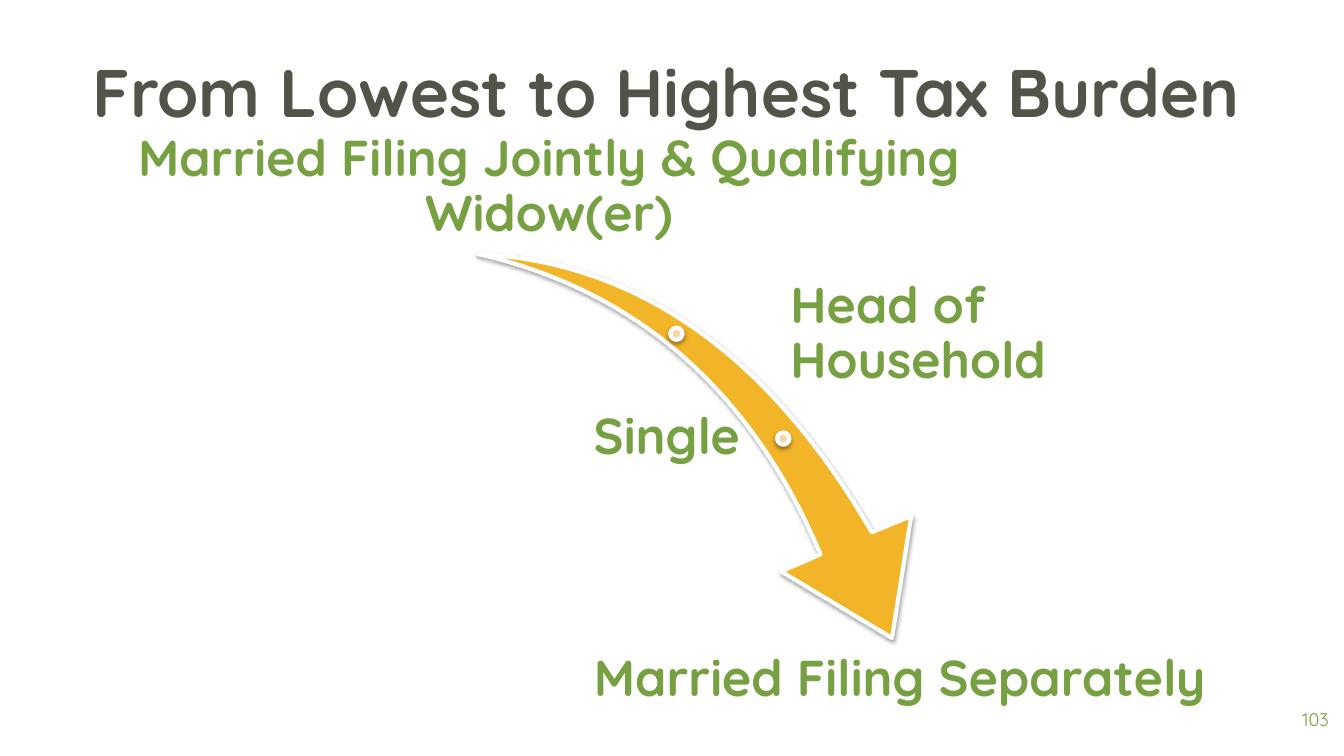
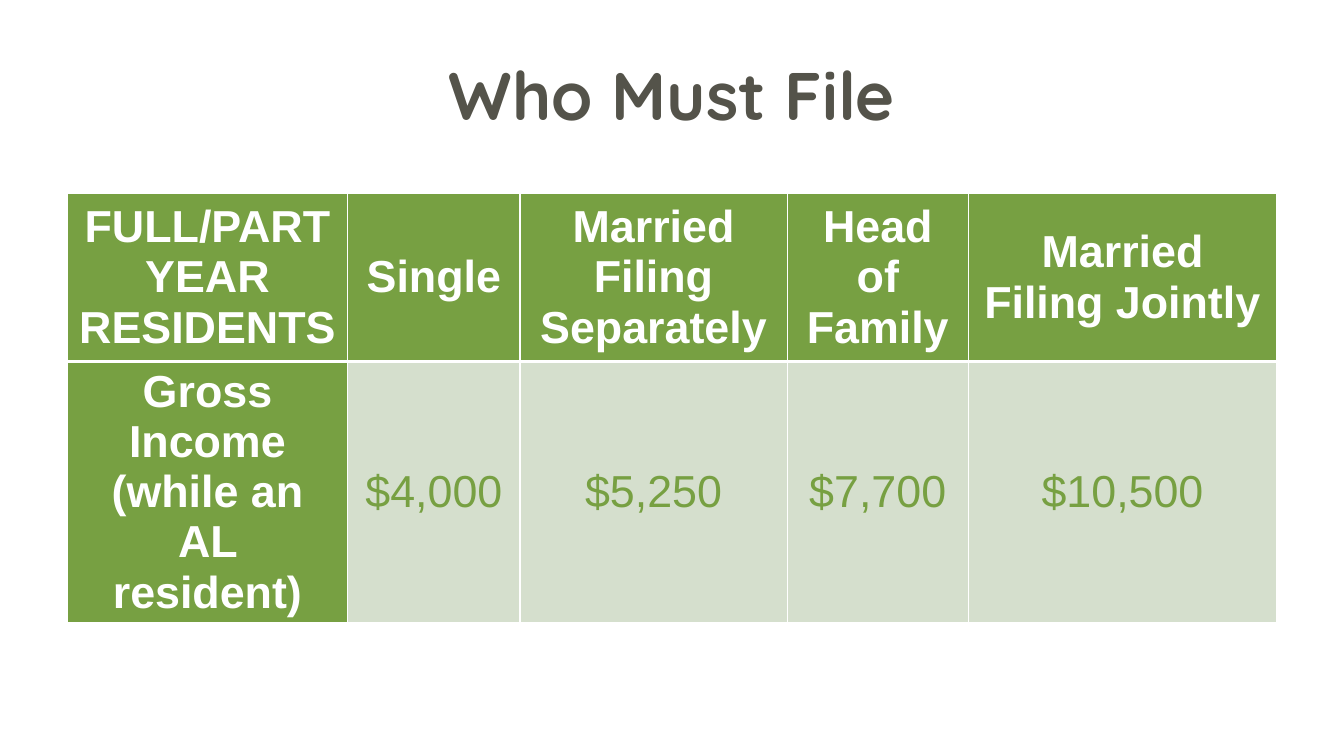
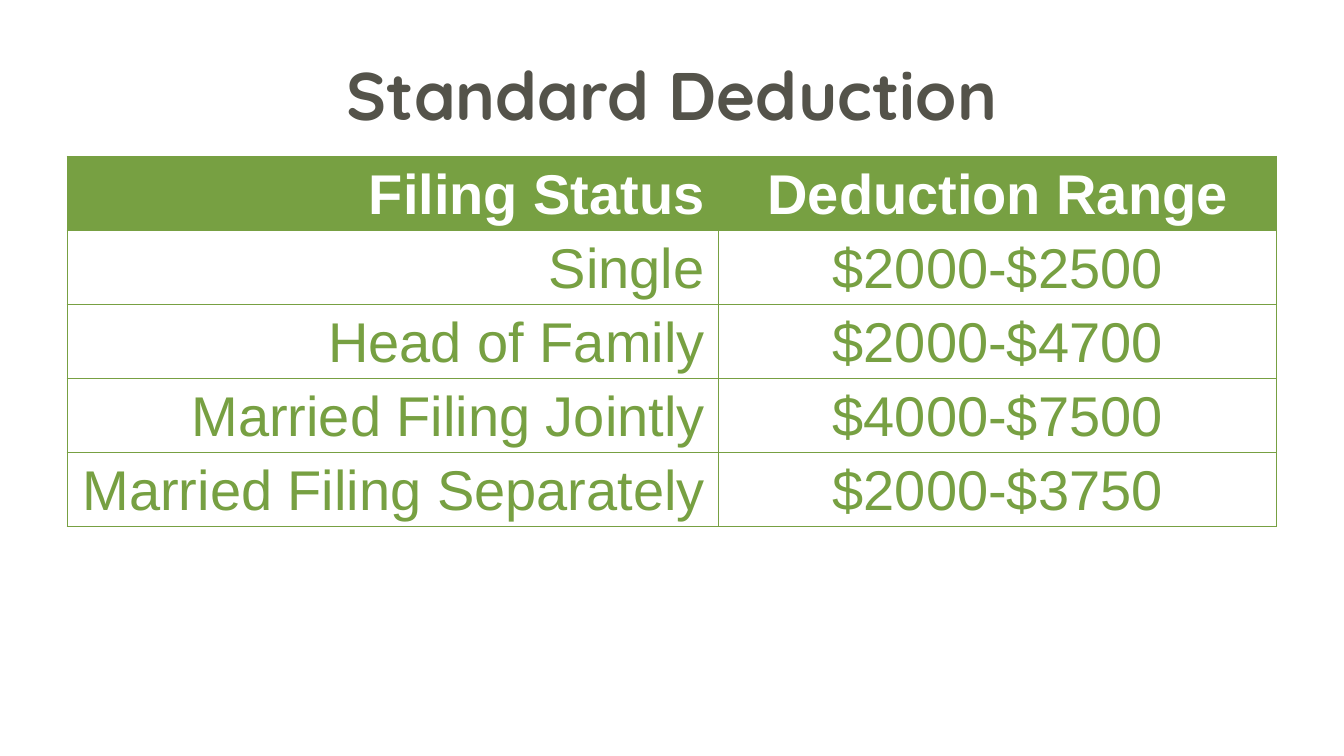
from lxml import etree
from pptx import Presentation
from pptx.dml.color import RGBColor
from pptx.enum import shapes, text
from pptx.oxml import ns
from pptx.util import Pt

GREEN, PALE_GREEN, WHITE = "77A042", "D5DFCD", "FFFFFF"
CHARCOAL, GOLD, CREAM = "54534A", "F2B529", "F4D6AB"
HEADING_FONT, TABLE_FONT = "Quicksand", "Arial"
LEFT, CENTER, RIGHT = text.PP_ALIGN.LEFT, text.PP_ALIGN.CENTER, text.PP_ALIGN.RIGHT
TOP, MIDDLE, BOTTOM = text.MSO_ANCHOR.TOP, text.MSO_ANCHOR.MIDDLE, text.MSO_ANCHOR.BOTTOM


def rgb(code):
    return RGBColor.from_string(code)


def add_child(parent, tag, **attributes):
    return etree.SubElement(parent, ns.qn(tag), attributes)


def write(frame, words, size, color, font=HEADING_FONT, bold=True, align=CENTER, spacing=None):
    paragraph = frame.paragraphs[0]
    paragraph.alignment = align
    if spacing:
        paragraph.line_spacing = spacing
    run = paragraph.add_run()
    run.text = words
    run.font.name = font
    run.font.size = Pt(size)
    run.font.bold = bold
    run.font.color.rgb = rgb(color)


def set_margins(holder, left, top, right, bottom):
    holder.margin_left, holder.margin_top = Pt(left), Pt(top)
    holder.margin_right, holder.margin_bottom = Pt(right), Pt(bottom)


def add_titled_slide(deck, words, left=48, top=21.6):
    slide = deck.slides.add_slide(deck.slide_layouts[5])
    title = slide.shapes.title
    title.left, title.top, title.width, title.height = Pt(left), Pt(top), Pt(864), Pt(90)
    frame = title.text_frame
    frame.auto_size = text.MSO_AUTO_SIZE.NONE
    frame.word_wrap = True
    frame.vertical_anchor = MIDDLE
    write(frame, words, 48, CHARCOAL)
    return slide


def add_label(slide, words, box, align=CENTER, anchor=TOP, size=36, color=GREEN,
              bold=True, margin=3.6, spacing=0.9):
    frame = slide.shapes.add_textbox(*map(Pt, box)).text_frame
    frame.word_wrap = True
    frame.vertical_anchor = anchor
    set_margins(frame, *[margin] * 4)
    write(frame, words, size, color, bold=bold, align=align, spacing=spacing)


def decorate(shape, fill):
    shape.fill.solid()
    shape.fill.fore_color.rgb = rgb(fill)
    shape.line.color.rgb = rgb(WHITE)
    shape.line.width = Pt(3)
    shape.shadow.inherit = False
    effects = shape._element.spPr.find(ns.qn("a:effectLst"))
    shadow = add_child(effects, "a:outerShdw", blurRad=str(Pt(3.1)), dist=str(Pt(1.6)),
                       dir="5400000", rotWithShape="0")
    tint = add_child(shadow, "a:srgbClr", val="000000")
    add_child(tint, "a:alpha", val="38000")


def curve(start, pull_out, pull_in, end, steps=32):
    points = []
    for step in range(1, steps + 1):
        t = step / steps
        weights = ((1 - t) ** 3, 3 * t * (1 - t) ** 2, 3 * t * t * (1 - t), t ** 3)
        anchors = (start, pull_out, pull_in, end)
        points.append(tuple(sum(w * a[axis] for w, a in zip(weights, anchors))
                            for axis in (0, 1)))
    return points


def add_burden_arrow(slide):
    tail, inner_neck = (341.3, 181.4), (586.1, 396)
    outline = curve(tail, (455.8, 187.2), (549.4, 253.4), (622.8, 380.2))
    outline += [(650.9, 368.6), (637.2, 455.8), (558, 408.2), inner_neck]
    outline += curve(inner_neck, (537.1, 279.4), (455, 207.4), tail)
    builder = slide.shapes.build_freeform(Pt(tail[0]), Pt(tail[1]))
    builder.add_line_segments([(Pt(x), Pt(y)) for x, y in outline], close=True)
    decorate(builder.convert_to_shape(), GOLD)


def add_stop(slide, left, top):
    stop = slide.shapes.add_shape(shapes.MSO_SHAPE.OVAL, Pt(left), Pt(top), Pt(8.8), Pt(8.8))
    decorate(stop, CREAM)


def set_borders(cell, color, left, right, top, bottom):
    properties = cell._tc.get_or_add_tcPr()
    edges = zip(("a:lnL", "a:lnR", "a:lnT", "a:lnB"), (left, right, top, bottom))
    for position, (tag, width) in enumerate(edges):
        edge = add_child(properties, tag, w=str(Pt(width)))
        add_child(add_child(edge, "a:solidFill"), "a:srgbClr", val=color)
        properties.insert(position, edge)


def add_grid(slide, top, widths, heights, rows, style_cell):
    frame = slide.shapes.add_table(len(rows), len(widths), Pt(48), Pt(top),
                                   Pt(sum(widths)), Pt(sum(heights)))
    table = frame.table
    table.first_row = table.horz_banding = False
    for column, width in zip(table.columns, widths):
        column.width = Pt(width)
    for row, height in zip(table.rows, heights):
        row.height = Pt(height)
    for r, values in enumerate(rows):
        for c, words in enumerate(values):
            style_cell(table.cell(r, c), words, r, c)


def fill_cell(cell, color):
    if color:
        cell.fill.solid()
        cell.fill.fore_color.rgb = rgb(color)
    else:
        cell.fill.background()


def style_threshold(cell, words, r, c):
    heading = r == 0 or c == 0
    set_margins(cell, 7.2, 3.6, 7.2, 3.6)
    cell.vertical_anchor = MIDDLE
    write(cell.text_frame, words, 32, WHITE if heading else GREEN, TABLE_FONT, heading)
    fill_cell(cell, GREEN if heading else PALE_GREEN)
    set_borders(cell, WHITE, 1, 1, 3 if r else 1, 1 if r else 3)


def style_deduction(cell, words, r, c):
    heading = r == 0
    set_margins(cell, 10, 10.8, 10, 3.6)
    write(cell.text_frame, words, 40, WHITE if heading else GREEN, TABLE_FONT, heading,
          CENTER if c else RIGHT, 0.86)
    fill_cell(cell, GREEN if heading else None)
    set_borders(cell, GREEN, 0.75, 0.75, 0.75, 0.75)


def build_burden(deck):
    slide = add_titled_slide(deck, "From Lowest to Highest Tax Burden", 44, 19.5)
    add_burden_arrow(slide)
    add_stop(slide, 478.8, 234)
    add_stop(slide, 555.1, 308.9)
    add_label(slide, "Married Filing Jointly & Qualifying Widow(er)",
              (26, 111.6, 732, 64.8), anchor=BOTTOM)
    add_label(slide, "Head of Household", (561, 206.6, 298, 64.8), LEFT, MIDDLE)
    add_label(slide, "Single", (310.3, 280.8, 221.8, 64.8), RIGHT, MIDDLE)
    add_label(slide, "Married Filing Separately", (351.4, 463, 582.5, 38))
    add_label(slide, "103", (898.6, 499, 57.6, 41), RIGHT, size=13, bold=False,
              margin=7.2, spacing=None)


def build_thresholds(deck):
    slide = add_titled_slide(deck, "Who Must File")
    add_grid(slide, 138.2, (200.5, 123, 190.8, 129.5, 220.2), (120, 186), (
        ("FULL/PART YEAR RESIDENTS", "Single", "Married Filing Separately",
         "Head of Family", "Married Filing Jointly"),
        ("Gross Income (while an AL resident)", "$4,000", "$5,250", "$7,700", "$10,500"),
    ), style_threshold)


def build_deductions(deck):
    slide = add_titled_slide(deck, "Standard Deduction")
    rows = (
        ("Filing Status", "Deduction Range"),
        ("Single", "$2000-$2500"),
        ("Head of Family", "$2000-$4700"),
        ("Married Filing Jointly", "$4000-$7500"),
        ("Married Filing Separately", "$2000-$3750"),
    )
    add_grid(slide, 111.6, (465.2, 398.8), [52.7] * len(rows), rows, style_deduction)


def main():
    deck = Presentation()
    deck.slide_width, deck.slide_height = Pt(960), Pt(540)
    build_burden(deck)
    build_thresholds(deck)
    build_deductions(deck)
    deck.save("out.pptx")


if __name__ == "__main__":
    main()
